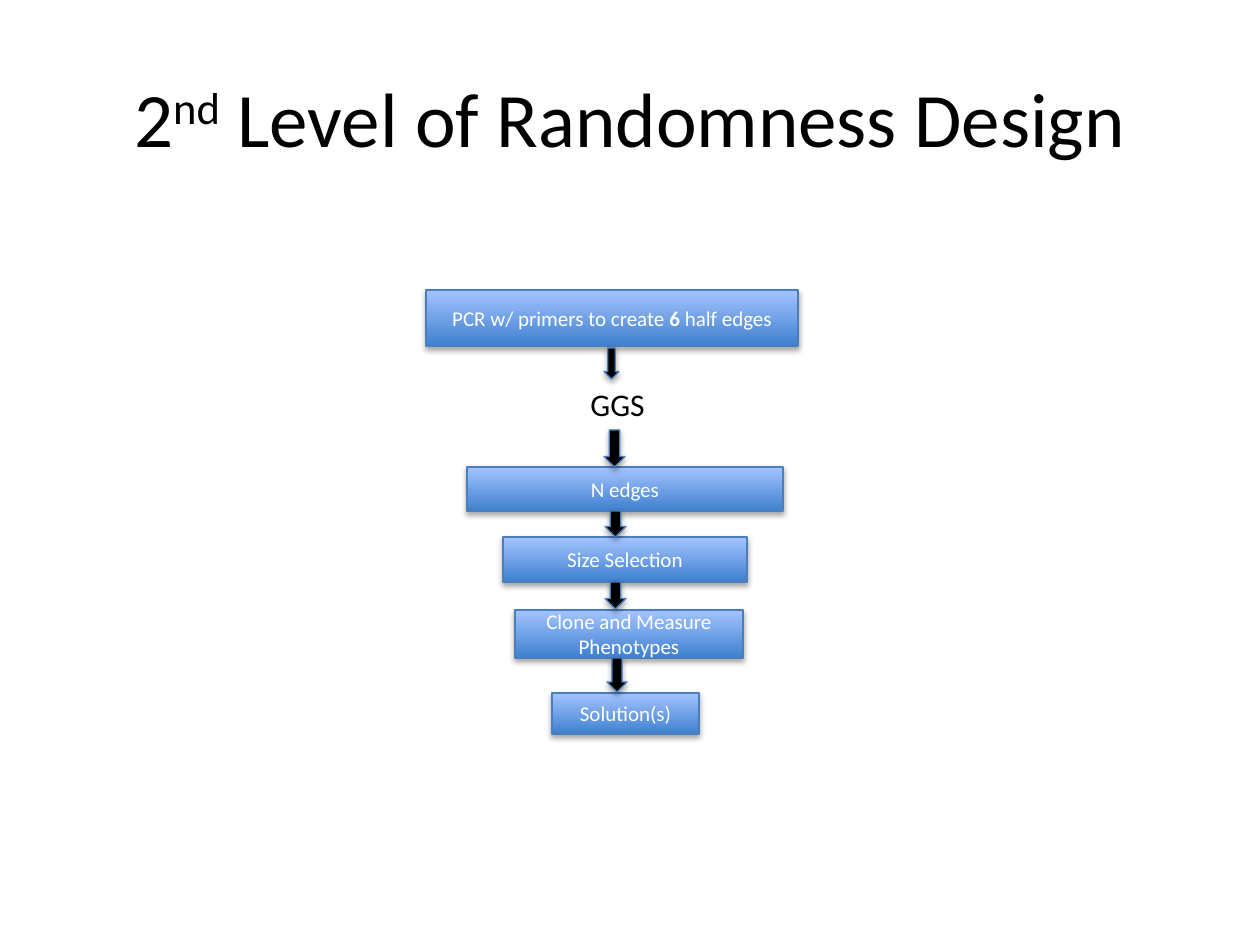
from dataclasses import dataclass

from lxml.etree import SubElement
from pptx import Presentation
from pptx.dml.color import RGBColor
from pptx.enum.shapes import MSO_SHAPE
from pptx.enum.text import MSO_ANCHOR, PP_ALIGN
from pptx.oxml.ns import qn
from pptx.util import Emu, Pt

PX = 914400 / 126


@dataclass(frozen=True)
class Theme:
    font: str = "Calibri"
    text: str = "000000"
    box_text: str = "FFFFFF"
    gradient: tuple = ("3F80CE", "A4C4FF")
    line: str = "4B7EBC"
    arrow: str = "000000"
    shadow: str = "000000"
    title_size: int = 44
    label_size: int = 18
    box_size: int = 12


def px(*values):
    return [Emu(round(v * PX)) for v in values]


def rgb(color):
    return RGBColor.from_string(color)


def add_run(p, text, *, font, size, color, bold=False, baseline=0):
    r = p.add_run()
    r.text = text
    r.font.name = font
    r.font.size = Pt(size)
    r.font.bold = bold
    r.font.color.rgb = rgb(color)
    if baseline:
        r._r.get_or_add_rPr().set("baseline", str(baseline * 1000))


class SlideBuilder:
    def __init__(self, slide, theme):
        self.s = slide
        self.theme = theme

    def fill_text(self, sp, runs, size, color, align, anchor):
        tf = sp.text_frame
        tf.word_wrap = True
        tf.vertical_anchor = anchor
        p = tf.paragraphs[0]
        p.alignment = align
        for text, style in runs:
            add_run(p, text, font=self.theme.font, size=size, color=color, **style)

    def text(self, at, runs, size, align=PP_ALIGN.LEFT, anchor=MSO_ANCHOR.TOP):
        sp = self.s.shapes.add_textbox(*px(*at))
        self.fill_text(sp, runs, size, self.theme.text, align, anchor)

    def shape(self, kind, at):
        sp = self.s.shapes.add_shape(kind, *px(*at))
        sp.line.color.rgb = rgb(self.theme.line)
        sp.line.width = Pt(0.75)
        sp.shadow.inherit = False
        effects = sp._element.spPr.find(qn("a:effectLst"))
        shadow = SubElement(effects, qn("a:outerShdw"), blurRad="40000",
                            dist="23000", dir="5400000", rotWithShape="0")
        color = SubElement(shadow, qn("a:srgbClr"), val=self.theme.shadow)
        SubElement(color, qn("a:alpha"), val="35000")
        return sp

    def box(self, at, runs):
        sp = self.shape(MSO_SHAPE.RECTANGLE, at)
        sp.fill.gradient()
        sp.fill.gradient_angle = 90
        for stop, color, position in zip(sp.fill.gradient_stops, self.theme.gradient, (0, 1)):
            stop.color.rgb = rgb(color)
            stop.position = position
        self.fill_text(sp, runs, self.theme.box_size, self.theme.box_text,
                       PP_ALIGN.CENTER, MSO_ANCHOR.MIDDLE)

    def arrow(self, at):
        sp = self.shape(MSO_SHAPE.DOWN_ARROW, at)
        sp.fill.solid()
        sp.fill.fore_color.rgb = rgb(self.theme.arrow)


def main():
    prs = Presentation()
    prs.slide_width, prs.slide_height = px(1260, 945)
    theme = Theme()
    slide = SlideBuilder(prs.slides.add_slide(prs.slide_layouts[6]), theme)

    title = [("2", {}), ("nd", {"baseline": 30}), (" Level of Randomness Design", {})]
    slide.text((63, 38, 1134, 158), title, theme.title_size,
               PP_ALIGN.CENTER, MSO_ANCHOR.MIDDLE)

    boxes = [
        ((426, 290, 372, 56), [("PCR w/ primers to create ", {}), ("6", {"bold": True}),
                               (" half edges", {})]),
        ((467, 467, 316, 44), [("N edges", {})]),
        ((503, 537, 244, 45), [("Size Selection", {})]),
        ((515, 610, 228, 48), [("Clone and Measure Phenotypes", {})]),
        ((552, 693, 147, 41), [("Solution(s)", {})]),
    ]
    for at, runs in boxes:
        slide.box(at, runs)

    slide.text((578, 379, 83, 50), [("GGS", {})], theme.label_size)

    arrows = [
        (604, 348, 15, 31),
        (604, 430, 21, 37),
        (605, 511, 21, 26),
        (605, 582, 21, 27),
        (607, 658, 20, 34),
    ]
    for at in arrows:
        slide.arrow(at)

    prs.save("out.pptx")


if __name__ == "__main__":
    main()
